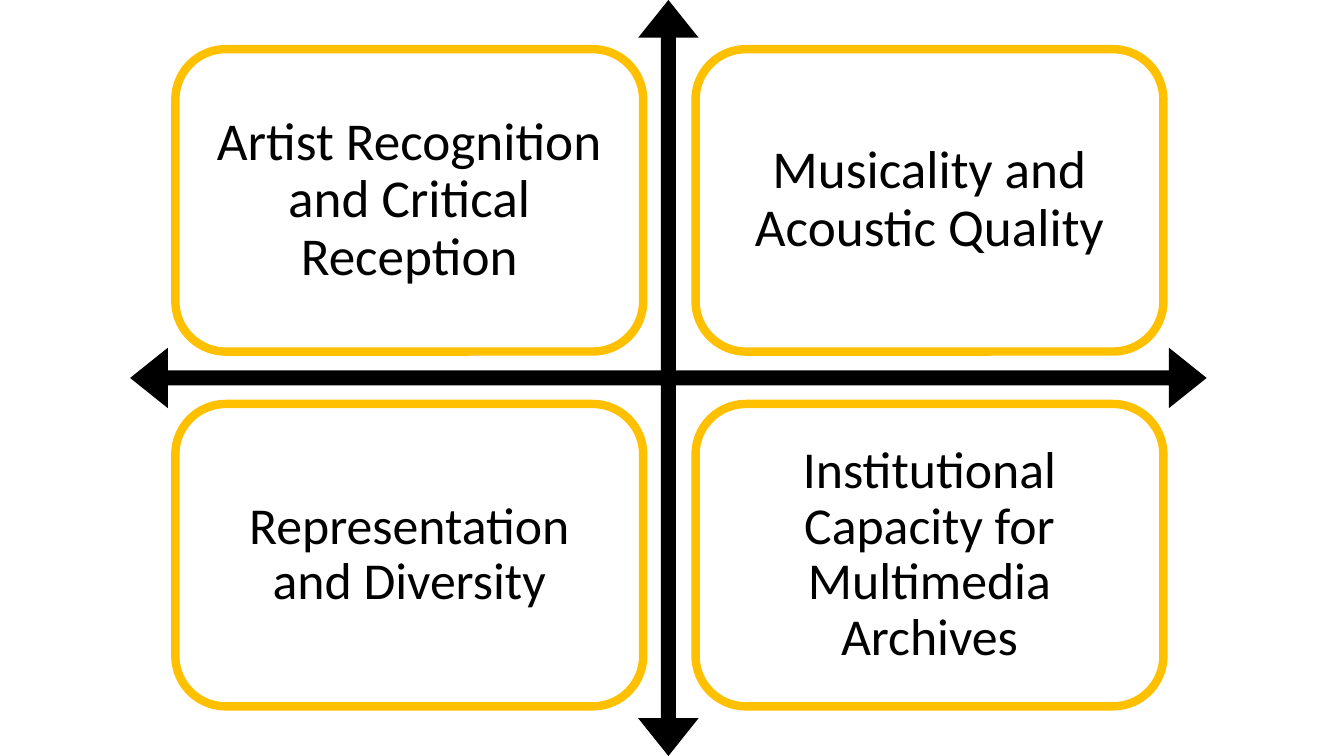
from collections import namedtuple

from pptx import Presentation
from pptx.dml.color import RGBColor
from pptx.enum.shapes import MSO_SHAPE
from pptx.enum.text import MSO_ANCHOR, PP_ALIGN
from pptx.util import Cm, Pt

Box = namedtuple("Box", "left top width height")
Theme = namedtuple("Theme", "font ink accent outline upper_size lower_size")

QUAD_ARROW = MSO_SHAPE.QUAD_ARROW
ROUNDED = MSO_SHAPE.ROUNDED_RECTANGLE
MIDDLE = MSO_ANCHOR.MIDDLE
CENTER = PP_ALIGN.CENTER
BLANK_LAYOUT = 6

THEME = Theme(
    font="Calibri",
    ink=RGBColor(0x00, 0x00, 0x00),
    accent=RGBColor(0xFF, 0xC0, 0x00),
    outline=Pt(6),
    upper_size=Pt(38),
    lower_size=Pt(37),
)

QUADRANTS = [
    ("Artist Recognition and Critical Reception", "Musicality and Acoustic Quality"),
    ("Representation and Diversity", "Institutional Capacity for Multimedia Archives"),
]


def set_all(target, values):
    for name, value in values.items():
        setattr(target, name, value)


def add_axes(page, box):
    axes = page.shapes.add_shape(QUAD_ARROW, *box)
    axes.shadow.inherit = False
    for index, ratio in enumerate((0.02, 0.04, 0.05)):
        axes.adjustments[index] = ratio
    axes.fill.solid()
    axes.fill.fore_color.rgb = THEME.ink
    axes.line.fill.background()


def add_card(page, box, label, size):
    card = page.shapes.add_shape(ROUNDED, *box)
    card.shadow.inherit = False
    card.fill.background()
    card.line.color.rgb = THEME.accent
    card.line.width = THEME.outline

    frame = card.text_frame
    inset = Cm(0.4)
    set_all(frame, {
        "word_wrap": True,
        "vertical_anchor": MIDDLE,
        "margin_left": inset,
        "margin_right": inset,
        "margin_top": inset,
        "margin_bottom": inset,
    })
    para = frame.paragraphs[0]
    set_all(para, {"text": label, "alignment": CENTER, "line_spacing": 0.9})
    set_all(para.font, {"name": THEME.font, "size": size})
    para.font.color.rgb = THEME.ink


def add_matrix(page, box):
    """Place the crossed axes and one card in each quadrant of the box."""
    add_axes(page, box)
    width, height = Cm(11.79), Cm(7.62)
    column_step, row_step = Cm(13.11), Cm(8.94)
    left, top = box.left + Cm(1.14), box.top + Cm(1.24)
    sizes = (THEME.upper_size, THEME.lower_size)
    for row, (labels, size) in enumerate(zip(QUADRANTS, sizes)):
        for column, label in enumerate(labels):
            place = Box(left + column * column_step, top + row * row_step, width, height)
            add_card(page, place, label, size)


def main():
    deck = Presentation()
    deck.slide_width, deck.slide_height = Cm(33.87), Cm(19.05)
    page = deck.slides.add_slide(deck.slide_layouts[BLANK_LAYOUT])
    add_matrix(page, Box(Cm(3.28), Cm(0), Cm(27.13), deck.slide_height))
    deck.save("out.pptx")


if __name__ == "__main__":
    main()
